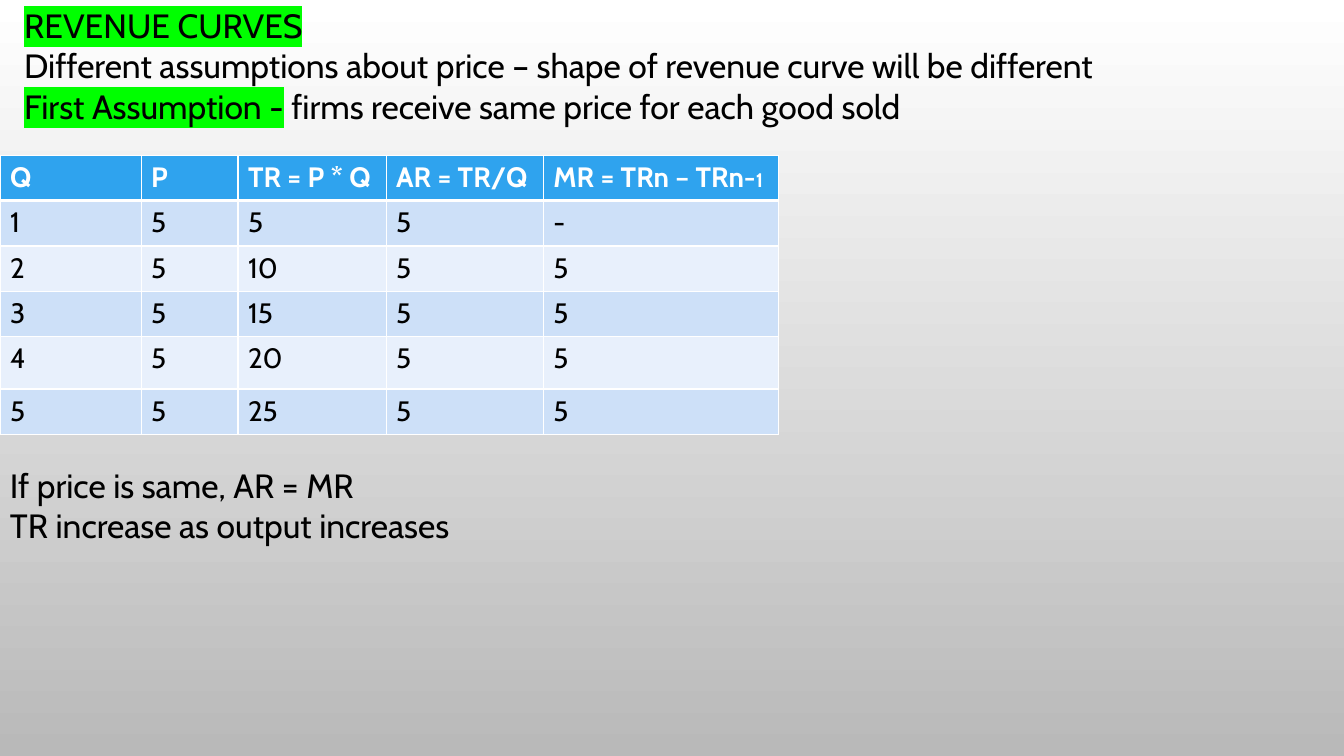
from dataclasses import dataclass

from lxml import etree
from pptx import Presentation
from pptx import util as u
from pptx.dml.color import RGBColor
from pptx.enum import text
from pptx.oxml.ns import qn


@dataclass(frozen=True)
class Theme:
    font: str = "Cabin"
    ink: str = "000000"
    white: str = "FFFFFF"
    backdrop_end: str = "B9B9B9"
    highlight: str = "00FF00"
    header: str = "2FA3EE"
    bands: tuple = ("CDE0F8", "E8F0FC")
    body_size: int = 24
    table_size: int = 20
    subscript_size: int = 14
    border: int = 1
    header_rule: int = 3


class SlideBuilder:
    def __init__(self, slide, theme):
        self.slide = slide
        self.theme = theme

    def background(self):
        fill = self.slide.background.fill
        fill.gradient()
        fill.gradient_angle = 270
        for stop, color in zip(fill.gradient_stops, (self.theme.white, self.theme.backdrop_end)):
            stop.color.rgb = RGBColor.from_string(color)

    def style(self, run, size, color, bold=False, highlighted=False):
        font = run.font
        font.name, font.size, font.bold = self.theme.font, u.Pt(size), bold
        font.color.rgb = RGBColor.from_string(color)
        if highlighted:
            mark = etree.Element(qn("a:highlight"))
            etree.SubElement(mark, qn("a:srgbClr"), val=self.theme.highlight)
            run._r.get_or_add_rPr().find(qn("a:solidFill")).addnext(mark)

    def set_lines(self, frame, lines):
        """Each line is a list of (wording, highlighted) pairs."""
        frame.word_wrap = True
        frame.auto_size = text.MSO_AUTO_SIZE.NONE
        frame.vertical_anchor = text.MSO_ANCHOR.TOP
        for index, line in enumerate(lines):
            paragraph = frame.add_paragraph() if index else frame.paragraphs[0]
            paragraph.alignment = text.PP_ALIGN.LEFT
            for wording, highlighted in line:
                run = paragraph.add_run()
                run.text = wording
                self.style(run, self.theme.body_size, self.theme.ink, highlighted=highlighted)

    def title(self, left, top, width, height, line):
        heading = self.slide.shapes.title
        heading.left, heading.top = u.Inches(left), u.Inches(top)
        heading.width, heading.height = u.Inches(width), u.Inches(height)
        self.set_lines(heading.text_frame, [line])
        heading.text_frame.margin_bottom = 0

    def text_box(self, left, top, width, height, lines, margin_top=0.05):
        box = self.slide.shapes.add_textbox(*map(u.Inches, (left, top, width, height)))
        self.set_lines(box.text_frame, lines)
        box.text_frame.margin_top = u.Inches(margin_top)

    def borders(self, cell, top, bottom):
        sides = {"lnL": self.theme.border, "lnR": self.theme.border, "lnT": top, "lnB": bottom}
        properties = cell._tc.get_or_add_tcPr()
        for side, points in sides.items():
            line = etree.SubElement(properties, qn(f"a:{side}"), w=str(u.Pt(points)))
            fill = etree.SubElement(line, qn("a:solidFill"))
            etree.SubElement(fill, qn("a:srgbClr"), val=self.theme.white)

    def table(self, left, top, widths, heights, rows):
        theme = self.theme
        grid = self.slide.shapes.add_table(
            len(rows), len(widths), u.Inches(left), u.Inches(top),
            u.Inches(sum(widths)), u.Inches(sum(heights))).table
        for column, width in zip(grid.columns, widths):
            column.width = u.Inches(width)
        for r, (values, height) in enumerate(zip(rows, heights)):
            grid.rows[r].height = u.Inches(height)
            is_header = r == 0
            fill = theme.header if is_header else theme.bands[(r - 1) % 2]
            for c, value in enumerate(values):
                cell = grid.cell(r, c)
                self.borders(cell, theme.header_rule if r == 1 else theme.border,
                             theme.header_rule if is_header else theme.border)
                cell.fill.solid()
                cell.fill.fore_color.rgb = RGBColor.from_string(fill)
                cell.text_frame.text = value
                self.style(cell.text_frame.paragraphs[0].runs[0], theme.table_size,
                           theme.white if is_header else theme.ink, bold=is_header)
        return grid

    def subscript(self, cell, wording):
        run = cell.text_frame.paragraphs[0].add_run()
        run.text = wording
        self.style(run, self.theme.subscript_size, self.theme.white, bold=True)


def main():
    deck = Presentation()
    deck.slide_width, deck.slide_height = u.Inches(13.33), u.Inches(7.5)
    theme = Theme()
    page = SlideBuilder(deck.slides.add_slide(deck.slide_layouts[5]), theme)
    page.background()

    # Heading and assumptions
    page.title(0.14, 0, 12.79, 0.45, [("REVENUE CURVES", True)])
    page.text_box(0.14, 0.45, 12.79, 0.86, [
        [("Different assumptions about price – shape of revenue curve will be different", False)],
        [("First Assumption -", True), (" firms receive same price for each good sold", False)],
    ], margin_top=0)

    # Revenue table at a constant price
    price = 5
    revenue_rows = [["Q", "P", "TR = P * Q", "AR = TR/Q", "MR = TRn – TRn-"]]
    for quantity in range(1, 6):
        marginal = "-" if quantity == 1 else str(price)
        revenue_rows.append(
            [str(quantity), str(price), str(price * quantity), str(price), marginal])
    revenue = page.table(0, 1.54, [1.4, 0.96, 1.47, 1.56, 2.33],
                         [0.45, 0.45, 0.45, 0.45, 0.52, 0.45], revenue_rows)
    page.subscript(revenue.cell(0, 4), "1")

    # Conclusions
    page.text_box(0, 4.56, 8.49, 0.91, [
        [("If price is same, AR = MR", False)],
        [("TR increase as output increases", False)],
    ])

    deck.save("out.pptx")


if __name__ == "__main__":
    main()
